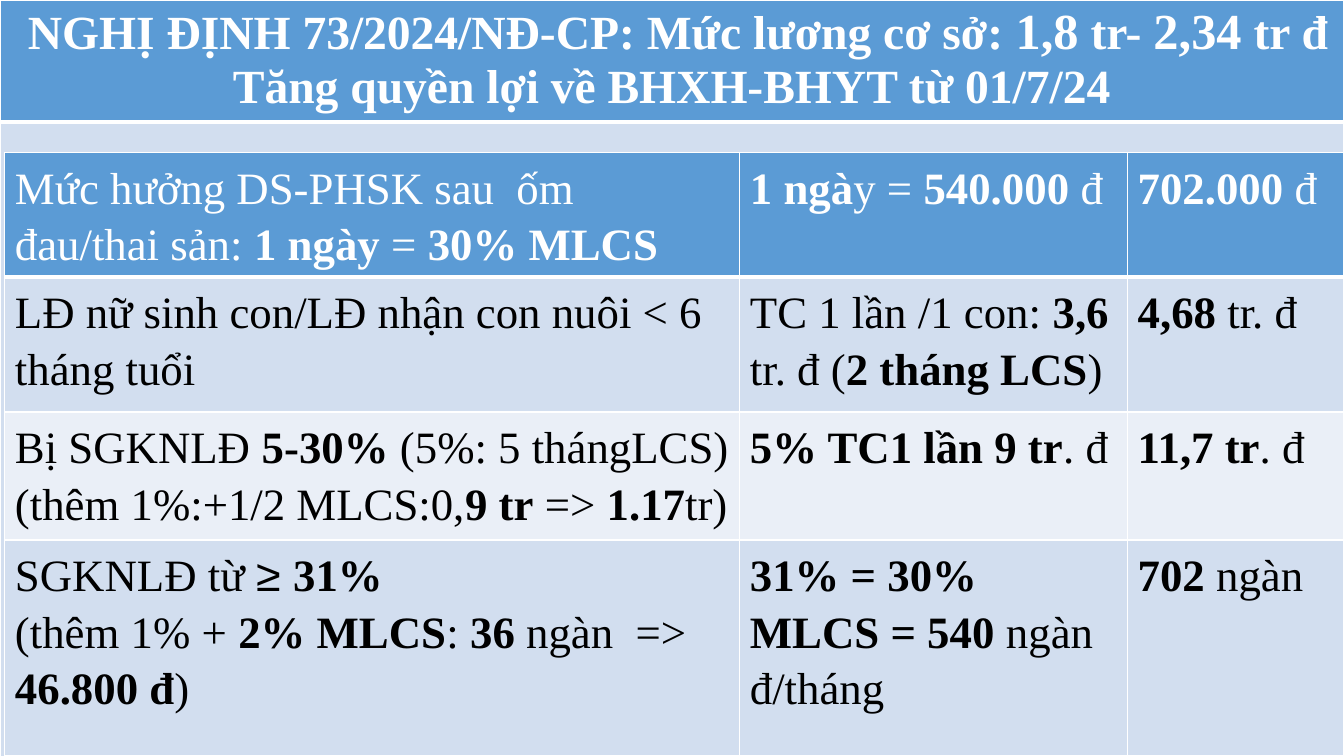
from lxml import etree
from pptx import Presentation
from pptx.dml.color import RGBColor
from pptx.enum import text
from pptx.oxml import ns
from pptx.util import Pt

WHITE = RGBColor(0xFF, 0xFF, 0xFF)
BLACK = RGBColor(0x00, 0x00, 0x00)
BLUE = RGBColor(0x5B, 0x9B, 0xD5)
PALE_BLUE = RGBColor(0xD2, 0xDE, 0xEF)
PALEST_BLUE = RGBColor(0xEA, 0xEF, 0xF7)
SERIF, SANS = "Times New Roman", "Arial"

TITLE = [
    [(" NGHỊ ĐỊNH 73/2024/NĐ-CP: Mức lương cơ sở: ", 34), ("1,8", 36),
     (" tr- ", 34), ("2,34", 36), (" tr đ", 34)],
    [("Tăng quyền lợi về BHXH-BHYT từ 01/7/24", 34)],
]
BENEFITS = [
    ["Mức hưởng DS-PHSK sau  ốm đau/thai sản: *1 ngày* = *30% MLCS*",
     "*1 ngà*y = *540.000* đ", "*702.000* đ"],
    ["LĐ nữ sinh con/LĐ nhận con nuôi < 6 tháng tuổi",
     "TC 1 lần /1 con: *3,6* tr. đ (*2 tháng LCS*)", "*4,68* tr. đ"],
    ["Bị SGKNLĐ *5-30% *(5%: 5 thángLCS)\n(thêm 1%:+1/2 MLCS:0,*9 tr* => *1.17*tr)",
     "*5% TC1 lần 9 tr*. đ", "*11,7 tr*. đ"],
    ["SGKNLĐ từ |≥ |*31%*\n(thêm 1% + *2% MLCS*: *36* ngàn  => *46.800 đ*)",
     "*31% = 30% MLCS = 540* ngàn đ/tháng", "*702 *ngàn"],
]


def add_grid(page, left, top, widths, heights):
    """Add a plain table with the given column widths and row heights."""
    frame = page.shapes.add_table(len(heights), len(widths), Pt(left), Pt(top),
                                  Pt(sum(widths)), Pt(sum(heights)))
    for column, width in zip(frame.table.columns, widths):
        column.width = Pt(width)
    for row, height in zip(frame.table.rows, heights):
        row.height = Pt(height)
    return frame.table


def style_cell(cell, fill, bottom=1):
    """Give a cell white borders and a solid fill."""
    properties = cell._tc.get_or_add_tcPr()
    for side, width in (("L", 1), ("R", 1), ("T", 1), ("B", bottom)):
        line = etree.SubElement(properties, ns.qn(f"a:ln{side}"), w=str(Pt(width)))
        solid = etree.SubElement(line, ns.qn("a:solidFill"))
        etree.SubElement(solid, ns.qn("a:srgbClr"), val=str(WHITE))
    cell.fill.solid()
    cell.fill.fore_color.rgb = fill


def add_span(para, words, size, color, bold, font=SERIF):
    """Append one formatted run to a paragraph."""
    span = para.add_run()
    span.text = words
    span.font.name = font
    span.font.size = Pt(size)
    span.font.bold = bold
    span.font.color.rgb = color


def write_benefit(cell, content, color):
    """Write lines in which asterisks enclose bold and bars enclose sans text."""
    for number, line in enumerate(content.split("\n")):
        para = cell.text_frame.add_paragraph() if number else cell.text_frame.paragraphs[0]
        para.line_spacing = Pt(40.4)
        for part, section in enumerate(line.split("|")):
            for piece, words in enumerate(section.split("*")):
                if words:
                    add_span(para, words, 32, color, piece % 2 == 1,
                             SANS if part % 2 else SERIF)


def add_banner(page):
    """Add the title band and the pale panel below it."""
    banner = add_grid(page, 0, 0, [960], [87, 461.5])
    heading = banner.cell(0, 0)
    style_cell(heading, BLUE, bottom=3)
    style_cell(banner.cell(1, 0), PALE_BLUE)
    for number, line in enumerate(TITLE):
        para = heading.text_frame.add_paragraph() if number else heading.text_frame.paragraphs[0]
        para.alignment = text.PP_ALIGN.CENTER
        for words, size in line:
            add_span(para, words, size, WHITE, True)


def add_benefits(page):
    """Add the table of benefits before and after the increase."""
    grid = add_grid(page, 3.5, 108.8, [525, 277, 154], [89, 96.5, 91.5, 154])
    for row, contents in enumerate(BENEFITS):
        header = row == 0
        fill = BLUE if header else PALE_BLUE if row % 2 else PALEST_BLUE
        for column, content in enumerate(contents):
            cell = grid.cell(row, column)
            style_cell(cell, fill, bottom=3 if header else 1)
            write_benefit(cell, content, WHITE if header else BLACK)


def main():
    """Build and save the slide."""
    deck = Presentation()
    deck.slide_width, deck.slide_height = Pt(960), Pt(540)
    page = deck.slides.add_slide(deck.slide_layouts[6])
    add_banner(page)
    add_benefits(page)
    deck.save("out.pptx")


if __name__ == "__main__":
    main()
